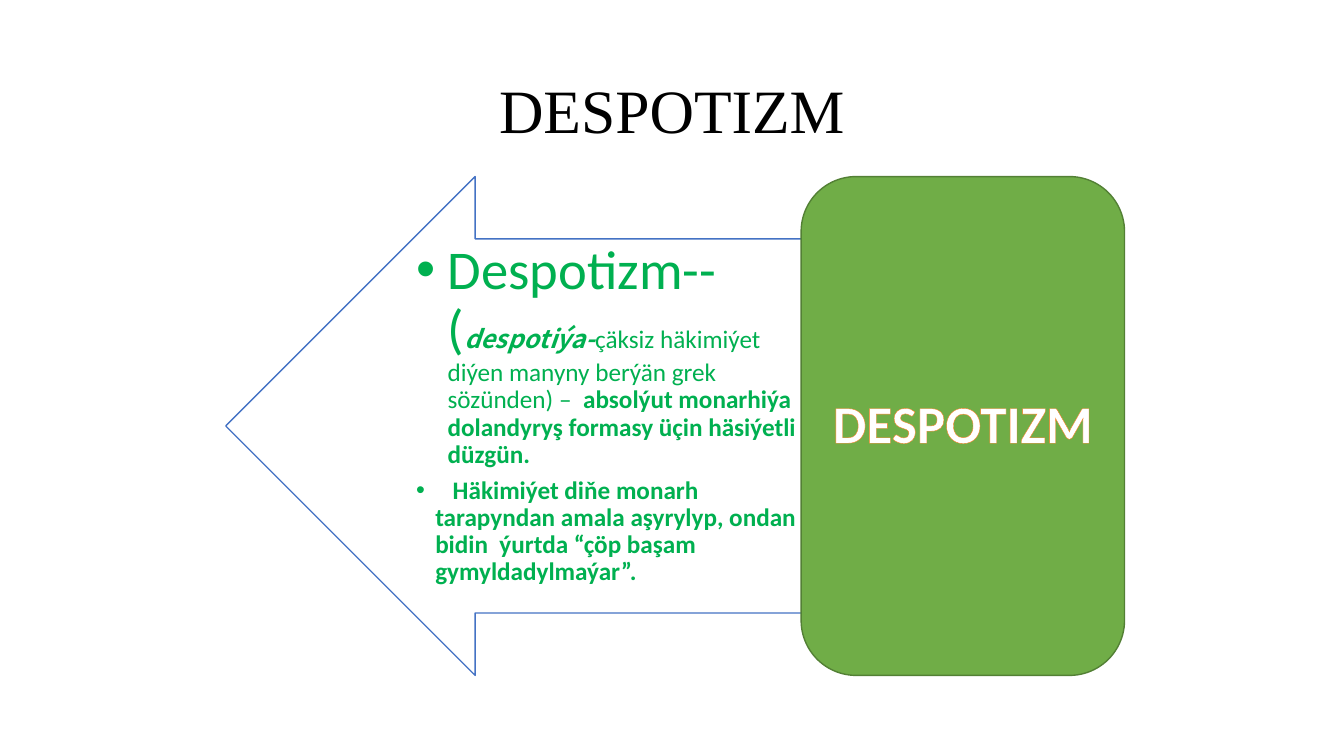
from dataclasses import dataclass, field

import lxml.etree
import pptx
import pptx.dml.color
import pptx.enum.shapes
import pptx.enum.text
import pptx.oxml
import pptx.oxml.ns
import pptx.util

Cm = pptx.util.Cm
Pt = pptx.util.Pt
RGB = pptx.dml.color.RGBColor
Kind = pptx.enum.shapes.MSO_SHAPE
Align = pptx.enum.text.PP_ALIGN
Anchor = pptx.enum.text.MSO_ANCHOR
qn = pptx.oxml.ns.qn

BLACK = RGB(0x00, 0x00, 0x00)
WHITE = RGB(0xFF, 0xFF, 0xFF)
BLUE = RGB(0x44, 0x72, 0xC4)
GREEN = RGB(0x70, 0xAD, 0x47)
MOSS = RGB(0x53, 0x80, 0x35)
LEAF = RGB(0x00, 0xB0, 0x50)
ORANGE = RGB(0xFF, 0x7A, 0x1F)
TOP, HIGH = 4.45, 12.57


@dataclass
class Run:
    text: str
    size: float = 18
    color: RGB = LEAF
    name: str = "Calibri"
    bold: bool = False
    italic: bool = False


@dataclass
class Para:
    runs: list[Run]
    hang: float = 0
    tab: float = 0
    format: dict = field(default_factory=dict)


@dataclass
class Block:
    kind: Kind
    left: float
    width: float
    fill: RGB
    line: RGB
    adjust: list[float]


ARROW = Block(Kind.LEFT_ARROW, 5.69, 14.68, WHITE, BLUE, [0.75, 0.5])
PANEL = Block(Kind.ROUNDED_RECTANGLE, 20.19, 8.15, GREEN, MOSS, [0.17])

TITLE = Para([Run("DESPOTIZM", 44, BLACK, "Times New Roman")],
             format={"alignment": Align.CENTER})
LABEL = Para([Run("DESPOTIZM", 38, WHITE, bold=True)],
             format={"alignment": Align.CENTER})
BODY = [
    Para([
        Run("Despotizm-- (", 39),
        Run("despotiýa-", name="Noto Sans CJK KR", bold=True, italic=True),
        Run("çäksiz häkimiýet diýen manyny berýän grek sözünden) –  "),
        Run("absolýut monarhiýa dolandyryş formasy üçin häsiýetli düzgün.",
            bold=True),
    ], hang=0.79, format={"space_after": Pt(6)}),
    Para([
        Run("\tHäkimiýet diňe monarh tarapyndan amala aşyrylyp, ondan "
            "bidin  ýurtda “çöp başam gymyldadylmaýar”.", bold=True),
    ], hang=0.48, tab=0.92),
]


def apply(item: object, values: dict) -> None:
    for key, value in values.items():
        setattr(item, key, value)


def add_bullet(par: object, hang: float, tab: float) -> None:
    props = par._p.get_or_add_pPr()
    props.set("marL", str(Cm(hang)))
    props.set("indent", str(-Cm(hang)))
    lxml.etree.SubElement(props, qn("a:buFont"), typeface="Arial")
    lxml.etree.SubElement(props, qn("a:buChar"), char="•")
    if tab:
        stops = lxml.etree.SubElement(props, qn("a:tabLst"))
        lxml.etree.SubElement(stops, qn("a:tab"), pos=str(Cm(tab)), algn="l")


def write(frame: object, paras: list[Para], inset: float,
          anchor: Anchor = Anchor.MIDDLE) -> None:
    sides = ("left", "right", "top", "bottom")
    apply(frame, {f"margin_{side}": Cm(inset) for side in sides})
    apply(frame, {"word_wrap": True, "vertical_anchor": anchor,
                  "auto_size": pptx.enum.text.MSO_AUTO_SIZE.NONE})
    for index, para in enumerate(paras):
        par = frame.add_paragraph() if index else frame.paragraphs[0]
        apply(par, {"line_spacing": 0.9, **para.format})
        if para.hang:
            add_bullet(par, para.hang, para.tab)
        for part in para.runs:
            run = par.add_run()
            run.text = part.text
            apply(run.font, {"size": Pt(part.size), "name": part.name,
                             "bold": part.bold, "italic": part.italic})
            run.font.color.rgb = part.color


def outline(run: object, color: RGB, width: float) -> None:
    """Draw a thin line around the letters of a run."""
    line = lxml.etree.Element(qn("a:ln"), w=str(Pt(width)))
    fill = lxml.etree.SubElement(line, qn("a:solidFill"))
    lxml.etree.SubElement(fill, qn("a:srgbClr"), val=str(color))
    run.font._element.insert(0, line)


def draw(slide: object, block: Block) -> object:
    shape = slide.shapes.add_shape(block.kind, Cm(block.left), Cm(TOP),
                                   Cm(block.width), Cm(HIGH))
    shape.shadow.inherit = False
    shape.fill.solid()
    shape.fill.fore_color.rgb = block.fill
    shape.line.color.rgb = block.line
    shape.line.width = Pt(1)
    for index, value in enumerate(block.adjust):
        shape.adjustments[index] = value
    return shape


def main() -> None:
    deck = pptx.Presentation()
    apply(deck, {"slide_width": Cm(33.87), "slide_height": Cm(19.05)})
    slide = deck.slides.add_slide(deck.slide_layouts[5])

    title = slide.shapes.title
    apply(title, {"left": Cm(2.33), "top": Cm(1.02),
                  "width": Cm(29.21), "height": Cm(3.68)})
    write(title.text_frame, [TITLE], 0.25)

    draw(slide, ARROW)
    body = slide.shapes.add_textbox(Cm(10.41), Cm(6.02), Cm(9.98), Cm(9.42))
    write(body.text_frame, BODY, 0.08, Anchor.TOP)

    panel = draw(slide, PANEL)
    write(panel.text_frame, [LABEL], 0.2)
    outline(panel.text_frame.paragraphs[0].runs[0], ORANGE, 1.42)

    deck.save("out.pptx")


if __name__ == "__main__":
    main()
